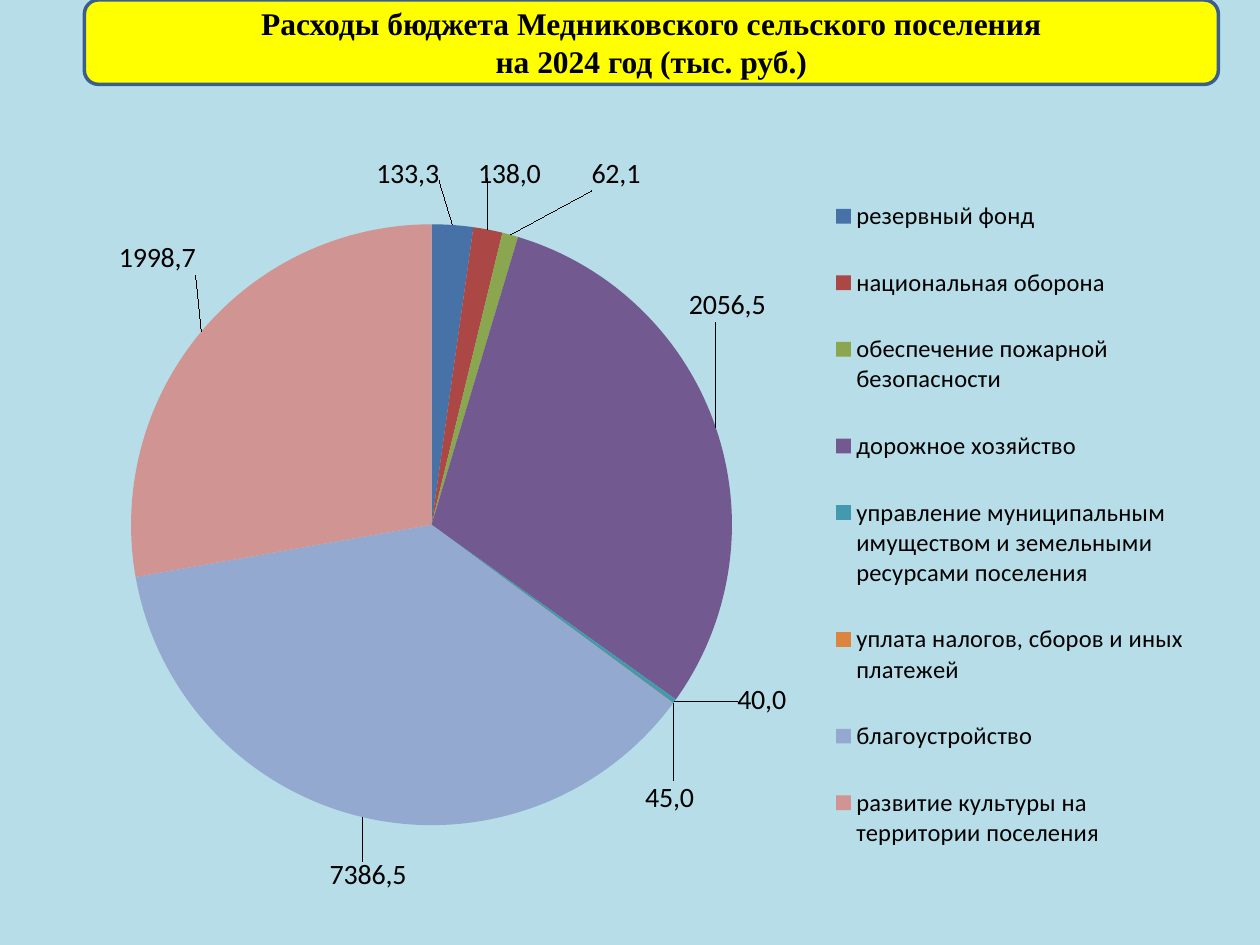
from lxml import etree
from pptx import Presentation
from pptx.chart.data import CategoryChartData
from pptx.dml.color import RGBColor
from pptx.enum.chart import XL_CHART_TYPE as ChartType
from pptx.enum.chart import XL_LABEL_POSITION as LabelPos
from pptx.enum.chart import XL_LEGEND_POSITION as LegendPos
from pptx.enum.shapes import MSO_SHAPE as Shape
from pptx.enum.text import MSO_ANCHOR as Anchor, PP_ALIGN as Align
from pptx.oxml.ns import qn
from pptx.util import Inches, Pt

BACKGROUND = RGBColor(0xB7, 0xDE, 0xE8)
YELLOW = RGBColor(0xFF, 0xFF, 0x00)
BORDER = RGBColor(0x3A, 0x5F, 0x8C)
BLACK = RGBColor(0x00, 0x00, 0x00)

# Category, value, label, slice colour, label shift (shares of the chart)
SLICES = [
    ("резервный фонд", 113, "133,3", RGBColor(0x46, 0x72, 0xA8), -0.04, -0.05),
    ("национальная оборона", 79.5, "138,0", RGBColor(0xAB, 0x47, 0x44), -0.01, -0.06),
    ("обеспечение пожарной безопасности", 43.6, "62,1",
     RGBColor(0x8A, 0xA6, 0x4F), 0.07, -0.05),
    ("дорожное хозяйство", 1535, "2056,5", RGBColor(0x72, 0x59, 0x90), -0.03, -0.14),
    ("управление муниципальным имуществом и земельными ресурсами поселения", 12, "40,0",
     RGBColor(0x42, 0x99, 0xB0), 0.05, -0.03),
    ("уплата налогов, сборов и иных платежей", 1, "45,0",
     RGBColor(0xDC, 0x85, 0x3E), -0.03, 0.1),
    ("благоустройство", 1883.1, "7386,5", RGBColor(0x93, 0xA9, 0xD0), 0.04, 0.05),
    ("развитие культуры на территории поселения", 1411, "1998,7",
     RGBColor(0xD0, 0x94, 0x93), 0, -0.07),
]


def set_layout(parent, index, **values):
    """Put a manual layout at the given child index of a chart element."""
    for old in parent.findall(qn("c:layout")):
        parent.remove(old)
    layout = etree.Element(qn("c:layout"))
    manual = etree.SubElement(layout, qn("c:manualLayout"))
    for name, value in values.items():
        etree.SubElement(manual, qn(f"c:{name}")).set("val", str(value))
    parent.insert(index, layout)


prs = Presentation()
prs.slide_width, prs.slide_height = Inches(10), Inches(7.5)
s = prs.slides.add_slide(prs.slide_layouts[6])
s.background.fill.solid()
s.background.fill.fore_color.rgb = BACKGROUND

# Title banner
banner = s.shapes.add_shape(Shape.ROUNDED_RECTANGLE, Inches(0.67), 0, Inches(9), Inches(0.67))
banner.shadow.inherit = False
banner.fill.solid()
banner.fill.fore_color.rgb = YELLOW
banner.line.color.rgb = BORDER
banner.line.width = Pt(2)
tf = banner.text_frame
tf.word_wrap = True
tf.vertical_anchor = Anchor.MIDDLE
tf.text = "Расходы бюджета Медниковского сельского поселения\nна 2024 год (тыс. руб.)"
for p in tf.paragraphs:
    p.alignment = Align.CENTER
    font = p.runs[0].font
    font.name, font.size, font.bold = "Times New Roman", Pt(18), True
    font.color.rgb = BLACK

# Pie chart
data = CategoryChartData()
data.categories = [row[0] for row in SLICES]
data.add_series("Series 1", [row[1] for row in SLICES])
chart = s.shapes.add_chart(ChartType.PIE, Inches(0.5), Inches(1.25),
                           Inches(9), Inches(5.83), data).chart
chart.has_title = False
chart.font.name, chart.font.size = "Calibri", Pt(10)
chart.font.color.rgb = BLACK
plot = chart.plots[0]
plot.vary_by_categories = True
series = plot.series[0]
series.data_labels.show_value = True
series.data_labels.position = LabelPos.OUTSIDE_END

# Slice colours and shifted labels
for i, (_, _, text, colour, dx, dy) in enumerate(SLICES):
    point = series.points[i]
    point.format.fill.solid()
    point.format.fill.fore_color.rgb = colour
    label = point.data_label
    label.text_frame.text = text
    font = label.text_frame.paragraphs[0].runs[0].font
    font.name, font.size, font.bold = "Calibri", Pt(16), False
    font.color.rgb = BLACK
    label.position = LabelPos.OUTSIDE_END
    set_layout(chart.element.xpath(f".//c:dLbl[c:idx/@val='{i}']")[0], 1, x=dx, y=dy)

# Legend and plot placement
chart.has_legend = True
legend = chart.legend
legend.position = LegendPos.RIGHT
legend.include_in_layout = False
legend.font.name, legend.font.size = "Calibri", Pt(14)
legend.font.color.rgb = BLACK
set_layout(chart.element.xpath(".//c:legend")[0], 1,
           xMode="edge", yMode="edge", x=0.67, y=0.01, w=0.33, h=0.98)
set_layout(chart.element.xpath(".//c:plotArea")[0], 0, layoutTarget="inner",
           xMode="edge", yMode="edge", x=0.06, y=0.09, w=0.53, h=0.82)

prs.save("out.pptx")
